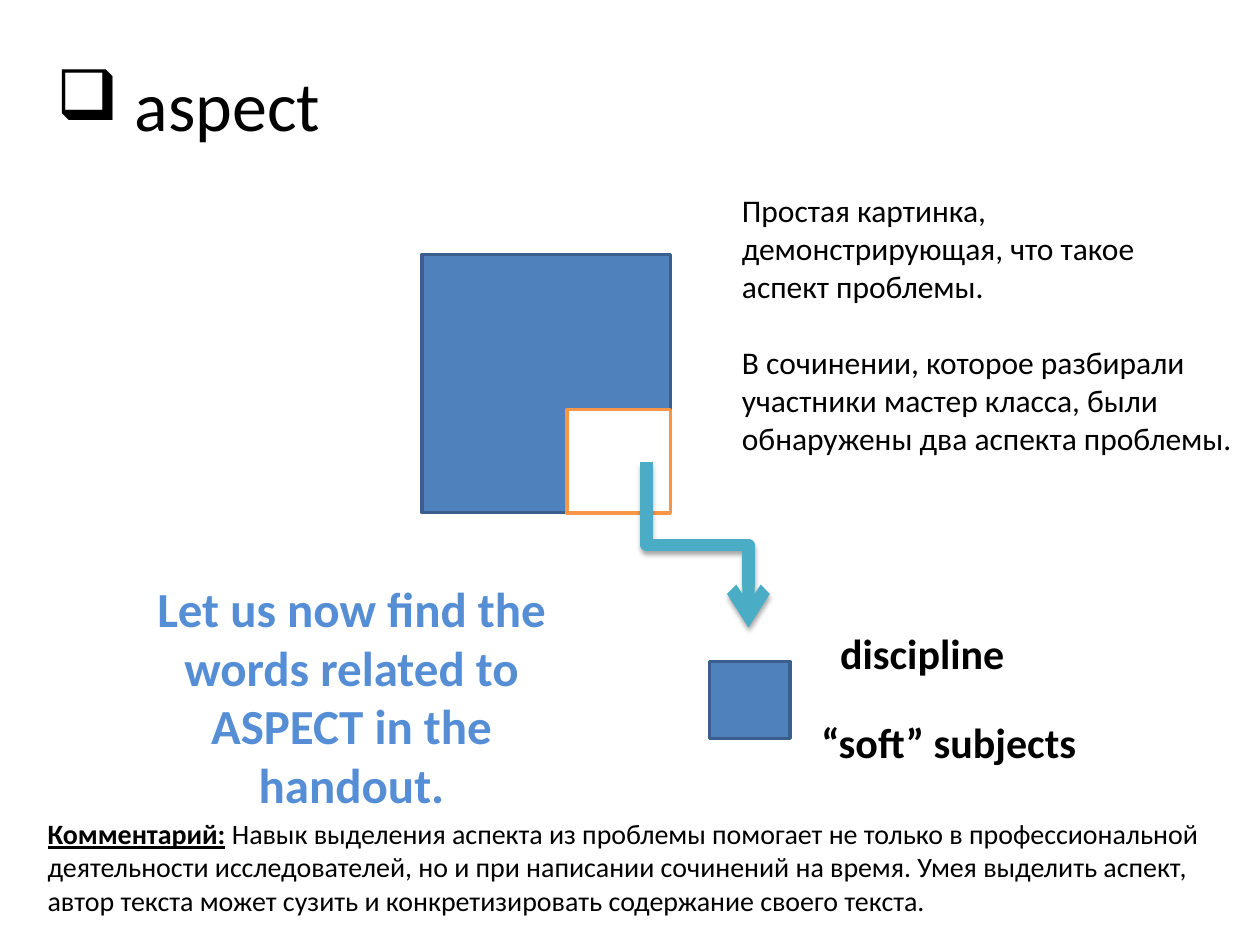
from lxml import etree
from pptx import Presentation
from pptx.dml.color import RGBColor
from pptx.enum.shapes import MSO_CONNECTOR, MSO_SHAPE
from pptx.enum.text import MSO_ANCHOR, MSO_AUTO_SIZE, PP_ALIGN
from pptx.oxml.ns import qn
from pptx.util import Inches, Pt

RECT, ELBOW = MSO_SHAPE.RECTANGLE, MSO_CONNECTOR.ELBOW
LEFT, CENTER = PP_ALIGN.LEFT, PP_ALIGN.CENTER
TOP, FIT, FIXED = MSO_ANCHOR.TOP, MSO_AUTO_SIZE.SHAPE_TO_FIT_TEXT, MSO_AUTO_SIZE.NONE

BLACK = RGBColor(0x00, 0x00, 0x00)
WHITE = RGBColor(0xFF, 0xFF, 0xFF)
BLUE = RGBColor(0x4F, 0x81, 0xBD)
NAVY = RGBColor(0x3A, 0x5F, 0x8C)
SKY = RGBColor(0x55, 0x8E, 0xD5)
ORANGE = RGBColor(0xF7, 0x96, 0x46)
TEAL = RGBColor(0x4B, 0xAC, 0xC6)
FONT = "Calibri"


def part(box, x, y, w, h):
    """Box inside a box, given in percent of its sides."""
    left, top, wide, high = box
    return (left + wide * x / 100, top + high * y / 100,
            wide * w / 100, high * h / 100)


def emu(box):
    return [Inches(v) for v in box]


def add_run(para, text, size, color=BLACK, bold=False, line=False):
    run = para.add_run()
    run.text = text
    font = run.font
    font.name, font.size, font.bold, font.underline = FONT, Pt(size), bold, line
    font.color.rgb = color


def text_box(slide, box, wrap):
    frame = slide.shapes.add_textbox(*emu(box)).text_frame
    frame.word_wrap, frame.auto_size = wrap, FIT
    return frame


def square(slide, box, fill, edge):
    shape = slide.shapes.add_shape(RECT, *emu(box))
    shape.shadow.inherit = False
    shape.fill.solid()
    shape.fill.fore_color.rgb = fill
    shape.line.color.rgb = edge
    shape.line.width = Pt(2)


def bent_arrow(slide, box):
    """Elbow that runs down, right and down across the box."""
    x, y, w, h = box
    midx, midy = x + w / 2, y + h / 2
    # Laid flat around the same centre, mirrored, then turned upright
    link = slide.shapes.add_connector(ELBOW, *emu(
        (midx + h / 2, midy - w / 2, midx - h / 2, midy + w / 2)))
    link.line.color.rgb = TEAL
    link.line.width = Pt(7)
    props = link._element.spPr
    props.find(qn("a:xfrm")).set("rot", str(270 * 60000))
    etree.SubElement(props.find(qn("a:ln")), qn("a:tailEnd"), type="arrow")
    effect = etree.SubElement(props, qn("a:effectLst"))
    shade = etree.SubElement(effect, qn("a:outerShdw"), blurRad=str(Pt(3.1)),
                             dist=str(Pt(1.8)), dir=str(90 * 60000), rotWithShape="0")
    tone = etree.SubElement(shade, qn("a:srgbClr"), val=str(BLACK))
    etree.SubElement(tone, qn("a:alpha"), val="35000")


def heading(slide, box):
    title = slide.shapes.title
    title.left, title.top, title.width, title.height = emu(box)
    frame = title.text_frame
    frame.word_wrap, frame.auto_size, frame.vertical_anchor = False, FIXED, TOP
    para = frame.paragraphs[0]
    para.alignment = LEFT
    add_run(para, " aspect", 40)
    props = para._p.get_or_add_pPr()
    props.set("marL", "0")
    props.set("indent", "0")
    etree.SubElement(props, qn("a:buChar"), char="❑")


def figure(slide, box):
    square(slide, part(box, 0, 0, 67.5, 53.4), BLUE, NAVY)
    square(slide, part(box, 78.1, 84.1, 21.9, 15.9), BLUE, NAVY)
    square(slide, part(box, 39.4, 32, 28.1, 21.4), WHITE, ORANGE)
    bent_arrow(slide, part(box, 61, 43, 27.7, 34.1))


def labels(slide, box):
    for text, spot in (("discipline", (6.6, 0, 67.3, 41.3)),
                       ("“soft” subjects", (0, 58.7, 100, 41.3))):
        frame = text_box(slide, part(box, *spot), False)
        add_run(frame.paragraphs[0], text, 24, bold=True)


def task(slide, box):
    para = text_box(slide, box, True).paragraphs[0]
    para.alignment = CENTER
    add_run(para, "Let us now find the words related to ASPECT in the handout.",
            28, SKY, True)


def story(slide, box):
    lines = ("Простая картинка,", "демонстрирующая, что такое", "аспект проблемы.",
             "В сочинении, которое разбирали", "участники мастер класса, были",
             "обнаружены два аспекта проблемы.")
    frame = text_box(slide, box, False)
    for i, line in enumerate(lines):
        para = frame.add_paragraph() if i else frame.paragraphs[0]
        add_run(para, line, 18)
    frame.paragraphs[3].space_before = Pt(22)


def comment(slide, box):
    para = text_box(slide, box, True).paragraphs[0]
    add_run(para, "Комментарий:", 16, bold=True, line=True)
    add_run(para, " Навык выделения аспекта из проблемы помогает не только в "
            "профессиональной деятельности исследователей, но и при написании "
            "сочинений на время. Умея выделить аспект, автор текста может сузить "
            "и конкретизировать содержание своего текста.", 16)


def main():
    deck = Presentation()
    deck.slide_width, deck.slide_height = Inches(10), Inches(7.5)
    slide = deck.slides.add_slide(deck.slide_layouts[5])
    page = (0, 0, 10, 7.5)
    # Regions in percent of the slide
    heading(slide, part(page, 3.5, 5.87, 24.4, 10.27))
    figure(slide, part(page, 33.5, 26.93, 29.2, 51.2))
    labels(slide, part(page, 64.2, 65.73, 22.6, 16.13))
    task(slide, part(page, 10.6, 60.53, 34.6, 26.53))
    story(slide, part(page, 57.9, 19.6, 41.3, 29.6))
    comment(slide, part(page, 2.8, 85.73, 95.3, 12.13))
    deck.save("out.pptx")


if __name__ == "__main__":
    main()
